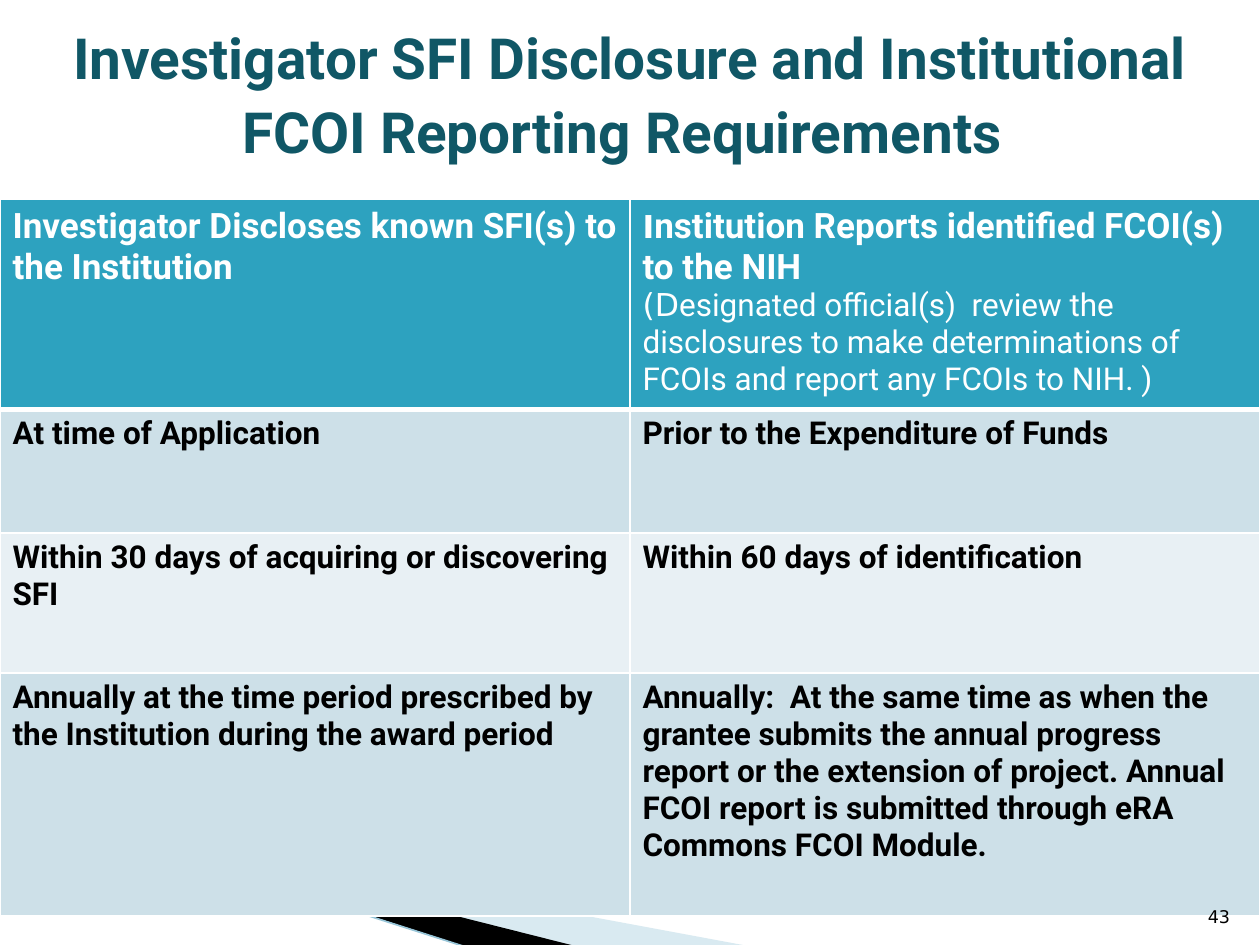
"""Build the slide on SFI disclosure and FCOI reporting requirements."""
from lxml import etree
from pptx import Presentation
from pptx.dml.color import RGBColor
from pptx.enum.shapes import MSO_CONNECTOR
from pptx.enum.text import MSO_ANCHOR, PP_ALIGN
from pptx.oxml.ns import qn
from pptx.util import Pt

STRAIGHT = MSO_CONNECTOR.STRAIGHT
MIDDLE, BOTTOM = MSO_ANCHOR.MIDDLE, MSO_ANCHOR.BOTTOM
CENTER, RIGHT = PP_ALIGN.CENTER, PP_ALIGN.RIGHT

WHITE = RGBColor(0xFF, 0xFF, 0xFF)
BLACK = RGBColor(0, 0, 0)
DARK_TEAL = RGBColor(0x10, 0x57, 0x66)
TEAL = RGBColor(0x2D, 0xA2, 0xBF)
MIST = RGBColor(0xA0, 0xCB, 0xDC)
EDGE = RGBColor(0x97, 0xC5, 0xD8)
BAND_DARK = RGBColor(0xCD, 0xE0, 0xE8)
BAND_LIGHT = RGBColor(0xE8, 0xF0, 0xF4)

MAIN_FONT, SECOND_FONT = "Roboto", "DejaVu Sans"

HEADER = [
    [([("Investigator Discloses known SFI(s) to the Institution", MAIN_FONT, 20)], True)],
    [
        ([("I", SECOND_FONT, 18),
          ("nstitution Reports identified FCOI(s) to the NIH", MAIN_FONT, 20)], True),
        ([("(D", SECOND_FONT, 18),
          ("esignated official(s)  review the disclosures to make determinations "
           "of FCOIs and report any FCOIs to NIH. )", MAIN_FONT, 18)], False),
    ],
]
DEADLINES = [
    ("At time of Application", "Prior to the Expenditure of Funds"),
    ("Within 30 days of acquiring or discovering SFI", "Within 60 days of identification"),
    ("Annually at the time period prescribed by the Institution during the award period",
     "Annually:  At the same time as when the grantee submits the annual progress report "
     "or the extension of project. Annual FCOI report is submitted through eRA Commons "
     "FCOI Module."),
]
ROW_HEIGHTS = [120.2, 70.6, 79.9, 139]


class SlideWriter:
    """Holds the current slide and draws each kind of element on it."""

    def __init__(self, page):
        self.page = page

    def wedge(self, points, color, alpha=None):
        corners = [(Pt(x), Pt(y)) for x, y in points]
        builder = self.page.shapes.build_freeform(*corners[0], scale=1.0)
        builder.add_line_segments(corners[1:], close=True)
        shape = builder.convert_to_shape()
        shape.shadow.inherit = False
        shape.fill.solid()
        shape.fill.fore_color.rgb = color
        shape.line.fill.background()
        if alpha is not None:
            tint = shape.fill._xPr.find(qn("a:solidFill"))[0]
            etree.SubElement(tint, qn("a:alpha"), val=str(alpha * 1000))

    def line(self, start, end, color, width):
        ends = [Pt(value) for value in (*start, *end)]
        connector = self.page.shapes.add_connector(STRAIGHT, *ends)
        connector.line.color.rgb = color
        connector.line.width = Pt(width)
        etree.SubElement(connector._element.spPr, qn("a:effectLst"))

    def paragraph(self, para, spans, color, bold, align=None):
        para.alignment = align
        para.font.color.rgb = color
        para.font.bold = bold
        for text, font, size in spans:
            span = para.add_run()
            span.text = text
            span.font.name = font
            span.font.size = Pt(size)

    def text(self, area, spans, color, bold, align, anchor):
        box = self.page.shapes.add_textbox(*[Pt(value) for value in area])
        frame = box.text_frame
        frame.word_wrap = True
        frame.vertical_anchor = anchor
        self.paragraph(frame.paragraphs[0], spans, color, bold, align)

    def borders(self, cell, top, bottom):
        properties = cell._tc.get_or_add_tcPr()
        for side, width in (("L", 1), ("R", 1), ("T", top), ("B", bottom)):
            edge = etree.SubElement(properties, qn(f"a:ln{side}"), w=str(Pt(width)))
            fill = etree.SubElement(edge, qn("a:solidFill"))
            etree.SubElement(fill, qn("a:srgbClr"), val=str(WHITE))

    def cell(self, cell, paragraphs, color, fill, top, bottom):
        self.borders(cell, top, bottom)
        cell.fill.solid()
        cell.fill.fore_color.rgb = fill
        frame = cell.text_frame
        for index, (spans, bold) in enumerate(paragraphs):
            para = frame.add_paragraph() if index else frame.paragraphs[0]
            self.paragraph(para, spans, color, bold)

    def table(self, left, top, width, heights, header, body):
        rows = [header] + [
            [[([(text, MAIN_FONT, 18)], True)] for text in row] for row in body]
        frame = self.page.shapes.add_table(
            len(rows), len(header), Pt(left), Pt(top), Pt(width), Pt(sum(heights)))
        table = frame.table
        for index, (row, height) in enumerate(zip(rows, heights)):
            table.rows[index].height = Pt(height)
            band = BAND_DARK if index % 2 else BAND_LIGHT
            fill, color = (band, BLACK) if index else (TEAL, WHITE)
            for column, paragraphs in enumerate(row):
                self.cell(table.cell(index, column), paragraphs, color, fill,
                          top=3 if index == 1 else 1, bottom=1 if index else 3)


def main():
    deck = Presentation()
    deck.slide_width, deck.slide_height = Pt(720), Pt(540)
    writer = SlideWriter(deck.slides.add_slide(deck.slide_layouts[6]))

    writer.wedge([(39.6, 468.5), (428.4, 540.7), (328.3, 540.7), (39.6, 468)], MIST, alpha=40)
    writer.wedge([(38.2, 467.3), (329, 540.7), (267.8, 541.4), (38.9, 468)], BLACK)
    writer.line((-0.7, 455.8), (267.1, 541.4), EDGE, 0.95)
    writer.table(0, 113.8, 720, ROW_HEIGHTS, HEADER, DEADLINES)
    writer.text((681.1, 504.7, 28.8, 28.8), [("43", SECOND_FONT, 10)],
                BLACK, False, RIGHT, BOTTOM)
    title = "Investigator SFI Disclosure and Institutional FCOI Reporting Requirements"
    writer.text((0, 0, 720, 108), [(title, MAIN_FONT, 32.4), (" ", MAIN_FONT, 36)],
                DARK_TEAL, True, CENTER, MIDDLE)

    deck.save("out.pptx")


if __name__ == "__main__":
    main()
